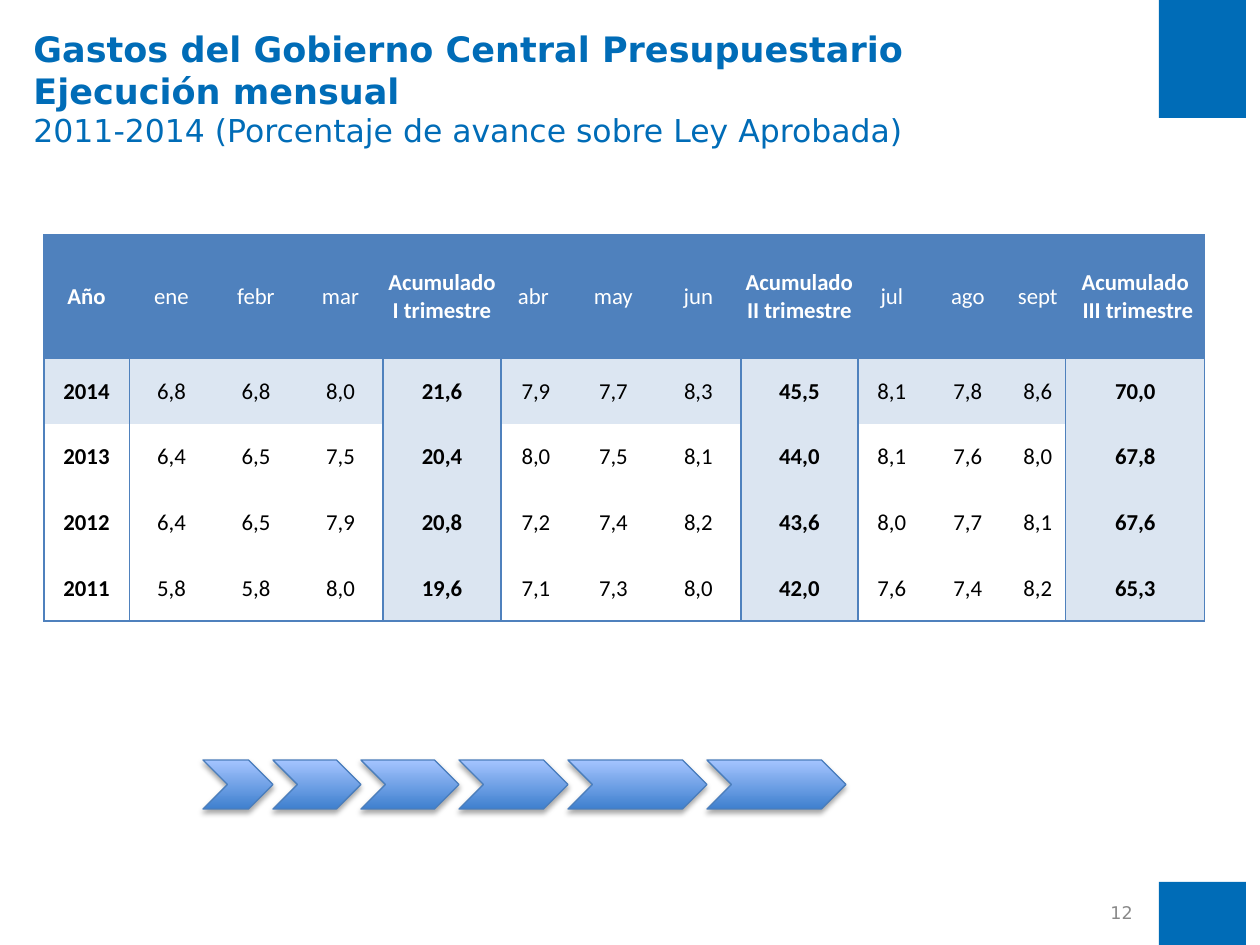
"""Builds the slide on monthly central government spending, 2011-2014."""
from lxml import etree
from pptx import Presentation
from pptx.dml.color import RGBColor
from pptx.enum.shapes import MSO_SHAPE
from pptx.enum.text import MSO_ANCHOR, PP_ALIGN
from pptx.oxml.ns import qn
from pptx.util import Pt

PX = 914400 / 126
RECTANGLE, CHEVRON = MSO_SHAPE.RECTANGLE, MSO_SHAPE.CHEVRON
TOP, MIDDLE = MSO_ANCHOR.TOP, MSO_ANCHOR.MIDDLE
CENTER, RIGHT = PP_ALIGN.CENTER, PP_ALIGN.RIGHT

TITLE_BLUE = RGBColor(0x00, 0x6C, 0xB7)
PAGE_GRAY = RGBColor(0x89, 0x89, 0x89)
HEADER_BLUE = RGBColor(0x4F, 0x81, 0xBD)
MONTH_BLUE = RGBColor(0xDC, 0xE6, 0xF2)
TOTAL_BLUE = RGBColor(0xDB, 0xE5, 0xF1)
ARROW_DARK = RGBColor(0x3F, 0x80, 0xCE)
ARROW_LIGHT = RGBColor(0xA4, 0xC4, 0xFF)
ARROW_LINE = RGBColor(0x4B, 0x7E, 0xBC)
WHITE = RGBColor(0xFF, 0xFF, 0xFF)
BLACK = RGBColor(0x00, 0x00, 0x00)

TITLE_FONT, TABLE_FONT = "DejaVu Sans", "Calibri"
NO_TABLE_STYLE = "{2D5ABB26-0587-4C30-8999-92F81FD0307C}"


def add_run(paragraph, text, font, size, color, bold=False):
    run = paragraph.add_run()
    run.text = text
    run.font.name = font
    run.font.size = Pt(size)
    run.font.bold = bold
    run.font.color.rgb = color


def to_emu(*lengths):
    return [round(length * PX) for length in lengths]


prs = Presentation()
prs.slide_width, prs.slide_height = to_emu(1260, 945)
slide = prs.slides.add_slide(prs.slide_layouts[6])

for top, height in [(0, 118), (882, 63)]:
    corner = slide.shapes.add_shape(RECTANGLE, *to_emu(1159, top, 87, height))
    corner.shadow.inherit = False
    corner.fill.solid()
    corner.fill.fore_color.rgb = TITLE_BLUE
    corner.line.fill.background()

title = slide.shapes.add_textbox(*to_emu(21, 21, 1125, 158)).text_frame
title.word_wrap = True
title.vertical_anchor = TOP
heading = title.paragraphs[0]
for text in ["Gastos del Gobierno Central Presupuestario", "Ejecución mensual "]:
    add_run(heading, text, TITLE_FONT, 20, TITLE_BLUE, True)
    heading.add_line_break()
add_run(heading, "2011-2014 (Porcentaje de avance sobre Ley Aprobada)",
        TITLE_FONT, 18, TITLE_BLUE)

page = slide.shapes.add_textbox(*to_emu(852, 900, 293, 26)).text_frame
page.word_wrap = True
page.vertical_anchor = MIDDLE
page.paragraphs[0].alignment = RIGHT
add_run(page.paragraphs[0], "12", TITLE_FONT, 10, PAGE_GRAY)

stage_left = 203
for stage_width in [70, 88, 98, 109, 139, 139]:
    stage = slide.shapes.add_shape(CHEVRON, *to_emu(stage_left, 760, stage_width, 49))
    stage.fill.gradient()
    stage.fill.gradient_angle = 90
    for stop, color in zip(stage.fill.gradient_stops, (ARROW_DARK, ARROW_LIGHT)):
        stop.color.rgb = color
    stage.line.color.rgb = ARROW_LINE
    stage.line.width = Pt(0.75)
    stage.shadow.inherit = False
    effects = stage._element.spPr.find(qn("a:effectLst"))
    shadow = etree.SubElement(
        effects, qn("a:outerShdw"), blurRad=str(Pt(3.1)), dist=str(Pt(1.8)),
        dir="5400000", algn="ctr", rotWithShape="0")
    tint = etree.SubElement(shadow, qn("a:srgbClr"), val=str(BLACK))
    etree.SubElement(tint, qn("a:alpha"), val="35000")
    stage_left += stage_width

spending = [
    ["Año", "ene", "febr", "mar", "Acumulado I trimestre", "abr ", "may", "jun",
     "Acumulado II trimestre", "jul", "ago", "sept", "Acumulado\n III trimestre"],
    "2014 6,8 6,8 8,0 21,6 7,9 7,7 8,3 45,5 8,1 7,8 8,6 70,0".split(),
    "2013 6,4 6,5 7,5 20,4 8,0 7,5 8,1 44,0 8,1 7,6 8,0 67,8".split(),
    "2012 6,4 6,5 7,9 20,8 7,2 7,4 8,2 43,6 8,0 7,7 8,1 67,6".split(),
    "2011 5,8 5,8 8,0 19,6 7,1 7,3 8,0 42,0 7,6 7,4 8,2 65,3".split(),
]
column_widths = [85, 85, 84, 85, 118, 70, 85, 85, 117, 68, 84, 56, 139]
row_heights = [123, 66, 65, 66, 66]
total_columns = (4, 8, 12)
vertical_rules = {0: 1, 1: 0.5, 4: 1, 5: 1, 8: 1, 9: 1, 12: 1, 13: 1}
horizontal_rules = {0: 1, 1: 1, 5: 1}

table = slide.shapes.add_table(
    len(row_heights), len(column_widths),
    *to_emu(44, 235, sum(column_widths), sum(row_heights))).table
table.first_row = table.horz_banding = False
table._tbl.tblPr.find(qn("a:tableStyleId")).text = NO_TABLE_STYLE
for column, width in zip(table.columns, to_emu(*column_widths)):
    column.width = width
for row, height in zip(table.rows, to_emu(*row_heights)):
    row.height = height

for r, values in enumerate(spending):
    for c, value in enumerate(values):
        cell = table.cell(r, c)
        cell.vertical_anchor = MIDDLE
        cell.margin_left = cell.margin_right = cell.margin_top = round(PX)
        cell.margin_bottom = 0
        if r > 1 and c not in total_columns:
            cell.fill.background()
        else:
            cell.fill.solid()
            body_fill = TOTAL_BLUE if c in total_columns or c > 8 else MONTH_BLUE
            cell.fill.fore_color.rgb = body_fill if r else HEADER_BLUE
        for i, text in enumerate(value.split("\n")):
            paragraph = cell.text_frame.paragraphs[0] if i == 0 else cell.text_frame.add_paragraph()
            paragraph.alignment = CENTER
            add_run(paragraph, text, TABLE_FONT, 13, BLACK if r else WHITE,
                    c == 0 or c in total_columns)
        edges = [("a:lnL", vertical_rules.get(c)), ("a:lnR", vertical_rules.get(c + 1)),
                 ("a:lnT", horizontal_rules.get(r)), ("a:lnB", horizontal_rules.get(r + 1))]
        properties = cell._tc.get_or_add_tcPr()
        for tag, weight in reversed(edges):
            edge = etree.Element(qn(tag), w=str(Pt(weight or 0)))
            if weight:
                ink = etree.SubElement(edge, qn("a:solidFill"))
                etree.SubElement(ink, qn("a:srgbClr"), val=str(HEADER_BLUE))
            else:
                etree.SubElement(edge, qn("a:noFill"))
            properties.insert(0, edge)

prs.save("out.pptx")
